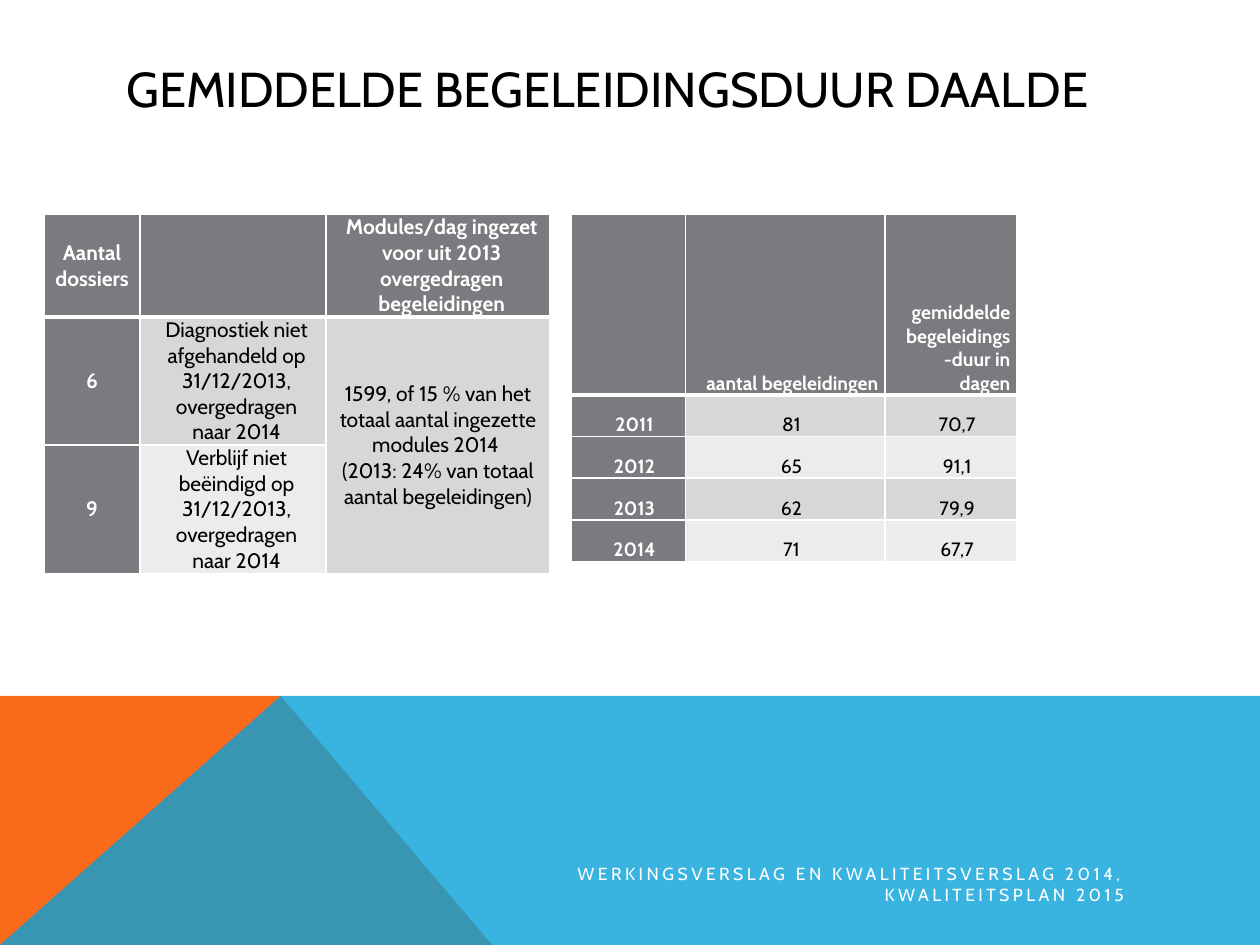
"""Build the slide on average guidance duration with two tables."""
from lxml.etree import SubElement
from pptx import Presentation
from pptx.dml.color import RGBColor
from pptx.enum.text import MSO_ANCHOR, MSO_AUTO_SIZE, PP_ALIGN
from pptx.oxml.ns import qn
from pptx.util import Cm, Pt

FONT = "Cabin"
COLORS = {
    "white": "FFFFFF", "black": "000000", "orange": "F96A1B", "blue": "08A1D9",
    "header": "797B7E", "odd": "D7D7D8", "even": "ECECEC",
}
TITLE = "GEMIDDELDE BEGELEIDINGSDUUR DAALDE"
FOOTER = "WERKINGSVERSLAG EN KWALITEITSVERSLAG 2014, KWALITEITSPLAN 2015"
BANDS = [
    ("orange", 100, [(0, 19.05), (0, 14.03), (5.66, 14.03), (9.92, 19.05)]),
    ("blue", 80, [(0, 19.05), (5.66, 14.03), (25.4, 14.03), (25.4, 19.05)]),
]
DOSSIERS = {
    "rows": [
        ["Aantal dossiers", "", "Modules/dag ingezet voor uit 2013 overgedragen begeleidingen"],
        ["6", "Diagnostiek niet afgehandeld op 31/12/2013, overgedragen naar 2014",
         "1599, of 15 % van het totaal aantal ingezette modules 2014 \n"
         "(2013: 24% van totaal aantal begeleidingen)"],
        ["9", "Verblijf niet beëindigd op 31/12/2013, overgedragen naar 2014", ""],
    ],
    "left": 0.89, "widths": [1.93, 3.75, 4.52], "heights": [2.06, 2.58, 2.58],
    "size": 12, "margin": 0.18, "anchor": MSO_ANCHOR.MIDDLE,
    "header_align": PP_ALIGN.CENTER,
    "indents": {(0, 2): 0.15, (1, 1): 0.15, (2, 1): 0.15},
    "merge": ((1, 2), (2, 2)),
}
DURATIONS = {
    "rows": [
        ["", "aantal begeleidingen ", "gemiddelde begeleidings-duur in dagen"],
        ["2011", "81", "70,7"],
        ["2012", "65", "91,1"],
        ["2013", "62", "79,9"],
        ["2014", "71", "67,7"],
    ],
    "left": 11.51, "widths": [2.31, 4.02, 2.66], "heights": [3.64] + [0.84] * 4,
    "size": 11, "margin": 0.13, "anchor": MSO_ANCHOR.BOTTOM,
    "header_align": PP_ALIGN.RIGHT,
    "indents": {(row, column): 0.25 for row in range(5) for column in range(3)},
    "merge": None,
}
TABLE_TOP = 4.32


def color(name):
    return RGBColor.from_string(COLORS[name])


def style(paragraph, size, color_name, bold, align):
    paragraph.alignment = align
    paragraph.font.name = FONT
    paragraph.font.size = Pt(size)
    paragraph.font.bold = bold
    paragraph.font.color.rgb = color(color_name)


def add_band(page, color_name, opacity, points):
    corners = [(Cm(x), Cm(y)) for x, y in points]
    builder = page.shapes.build_freeform(*corners[0])
    builder.add_line_segments(corners[1:], close=True)
    band = builder.convert_to_shape()
    band.shadow.inherit = False
    band.line.fill.background()
    band.fill.solid()
    band.fill.fore_color.rgb = color(color_name)
    if opacity < 100:
        tint = band.fill._xPr.find(".//" + qn("a:srgbClr"))
        SubElement(tint, qn("a:alpha"), val=str(opacity * 1000))


def add_borders(cell, row):
    properties = cell._tc.get_or_add_tcPr()
    widths = {"L": 1, "R": 1, "T": 3 if row == 1 else 1, "B": 3 if row == 0 else 1}
    for side, width in widths.items():
        line = SubElement(properties, qn(f"a:ln{side}"), w=str(Pt(width)))
        fill = SubElement(line, qn("a:solidFill"))
        SubElement(fill, qn("a:srgbClr"), val=COLORS["white"])


def add_grid(page, data):
    rows, widths, heights = data["rows"], data["widths"], data["heights"]
    table = page.shapes.add_table(
        len(rows), len(widths), Cm(data["left"]), Cm(TABLE_TOP),
        Cm(sum(widths)), Cm(sum(heights))).table
    for column, width in zip(table.columns, widths):
        column.width = Cm(width)
    for line, height in zip(table.rows, heights):
        line.height = Cm(height)
    if data["merge"]:
        first, last = data["merge"]
        table.cell(*first).merge(table.cell(*last))
    for row, texts in enumerate(rows):
        for column, text in enumerate(texts):
            heading = row == 0 or column == 0
            cell = table.cell(row, column)
            add_borders(cell, row)
            cell.fill.solid()
            cell.fill.fore_color.rgb = color("header" if heading else "odd" if row % 2 else "even")
            cell.vertical_anchor = data["anchor"]
            cell.margin_left = cell.margin_right = Cm(data["margin"])
            cell.margin_top = cell.margin_bottom = 0
            if not text:
                continue
            cell.text = text
            for paragraph in cell.text_frame.paragraphs:
                style(paragraph, data["size"], "white" if heading else "black", heading,
                      PP_ALIGN.CENTER if row else data["header_align"])
                indent = data["indents"].get((row, column), 0)
                paragraph._p.get_or_add_pPr().set("marL", str(Cm(indent)))


def fill_text(box, place, text, size, color_name, align):
    box.left, box.top, box.width, box.height = [Cm(length) for length in place]
    frame = box.text_frame
    frame.text = text
    frame.word_wrap = True
    frame.auto_size = MSO_AUTO_SIZE.NONE
    frame.vertical_anchor = MSO_ANCHOR.MIDDLE
    style(frame.paragraphs[0], size, color_name, False, align)


def main():
    deck = Presentation()
    deck.slide_width, deck.slide_height = Cm(25.4), Cm(19.05)
    page = deck.slides.add_slide(deck.slide_layouts[5])
    for band in BANDS:
        add_band(page, *band)
    fill_text(page.shapes.title, (2.29, 1.02, 20.88, 1.52), TITLE, 28, "black", PP_ALIGN.LEFT)
    footer = page.shapes.add_textbox(0, 0, 0, 0)
    fill_text(footer, (9.78, 17.45, 13.13, 0.76), FOOTER, 10, "white", PP_ALIGN.RIGHT)
    span = footer.text_frame.paragraphs[0].runs[0]
    span._r.get_or_add_rPr().set("spc", "200")
    for data in (DOSSIERS, DURATIONS):
        add_grid(page, data)
    deck.save("out.pptx")


if __name__ == "__main__":
    main()
